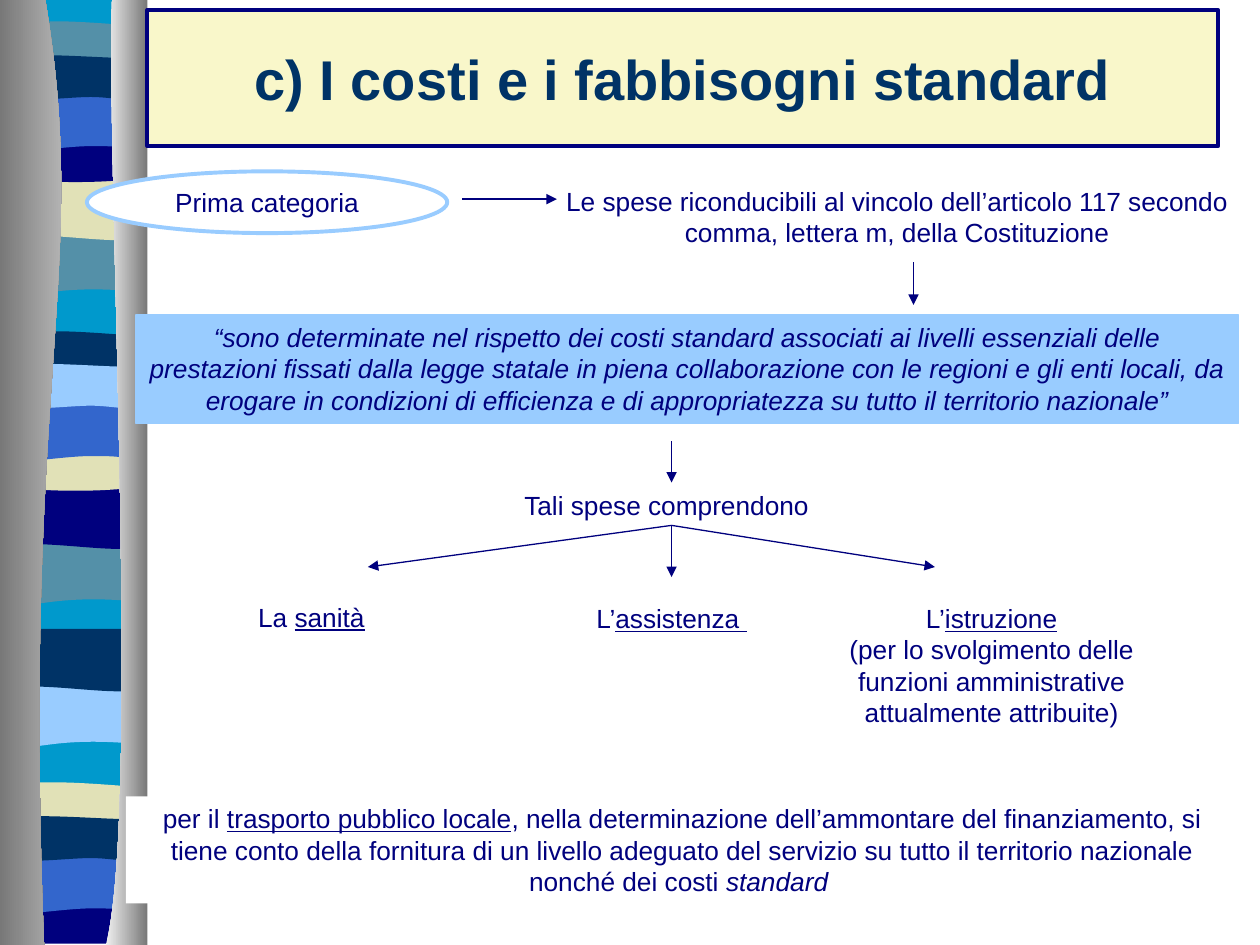
from dataclasses import dataclass

from lxml import etree
from pptx import Presentation
from pptx.dml.color import RGBColor
from pptx.enum import shapes, text
from pptx.oxml import ns
from pptx.util import Inches, Pt

NAVY = RGBColor(0x00, 0x00, 0x7E)
DEEP = RGBColor(0x00, 0x33, 0x66)
BLUE = RGBColor(0x33, 0x66, 0xCC)
SKY = RGBColor(0x99, 0xCC, 0xFF)
CYAN = RGBColor(0x00, 0x99, 0xCC)
STEEL = RGBColor(0x54, 0x90, 0xA8)
SAND = RGBColor(0xE1, 0xE1, 0xB7)
CREAM = RGBColor(0xF9, 0xF7, 0xCA)
WHITE = RGBColor(0xFF, 0xFF, 0xFF)
GREY = RGBColor(0x78, 0x78, 0x78)
SILVER = RGBColor(0xD0, 0xD0, 0xD0)
PALE = RGBColor(0xF0, 0xF0, 0xF0)

Point = tuple[float, float]
Chain = list[Point]
RECT = shapes.MSO_SHAPE.RECTANGLE
OVAL = shapes.MSO_SHAPE.OVAL

# An outline is a list of chains joined by straight lines. A chain is a start
# point, then three Bezier points per curve. Heights count from the band's top.
FLAT = [[(0.05, 0)], [(1.14, 0)]]
SWELL = [[(0.05, 0), (0.72, 0.05), (0.91, 0), (1.14, 0)]]
OUTLINES = {
    "ripple": FLAT + [[(1.14, 0.47), (0.39, 0.39), (0.24, 0.55), (0.05, 0.47)]],
    "bulge": FLAT + [[(1.14, 0.47), (0.96, 0.55), (0.39, 0.42), (0.05, 0.47)]],
    "crest": [
        [(0.05, 0), (0.12, -0.05), (0.29, -0.04), (0.47, -0.04),
         (0.65, -0.04), (1, -0.01), (1.14, 0)],
        [(1.14, 0.24), (0.96, 0.29), (0.24, 0.29), (0.05, 0.24)]],
    "swell": SWELL + [[(1.14, 0.32), (0.96, 0.38), (0.24, 0.38), (0.05, 0.32)]],
    "base": SWELL + [[(1.14, 0.37)], [(0.05, 0.37)]],
    "arch": FLAT + [[(1.14, 0.47), (0.97, 0.42), (0.9, 0.42), (0.72, 0.42),
                     (0.54, 0.42), (0.22, 0.47), (0.05, 0.47)]],
    "drift": [
        [(0.05, 0), (0.21, -0.05), (0.79, 0), (0.97, 0),
         (1.15, 0), (1.1, 0), (1.14, 0)],
        [(1.14, 0.31), (1.07, 0.36), (0.9, 0.31), (0.72, 0.31),
         (0.54, 0.31), (0.17, 0.36), (0.05, 0.31)]],
}


@dataclass
class Band:
    outline: str
    top: float
    color: RGBColor


@dataclass
class Span:
    text: str
    underline: bool = False
    italic: bool = False


@dataclass
class Box:
    place: tuple[float, float, float, float]
    paras: list[list[Span]]
    fill: RGBColor = WHITE
    line: RGBColor | None = None
    line_width: float = 0.75
    geometry: shapes.MSO_SHAPE = RECT
    title: bool = False


@dataclass
class Arrow:
    start: Point
    end: Point


BANDS = [
    Band("ripple", 1.85, STEEL), Band("bulge", 1.41, SAND),
    Band("crest", 0.21, STEEL), Band("swell", 1.08, NAVY),
    Band("arch", 0.74, BLUE), Band("drift", 0.46, DEEP),
    Band("ripple", 4.31, STEEL), Band("bulge", 3.86, NAVY),
    Band("crest", 2.67, DEEP), Band("swell", 3.53, SAND),
    Band("arch", 3.2, BLUE), Band("drift", 2.91, SKY),
    Band("ripple", 5.44, SKY), Band("bulge", 4.99, DEEP),
    Band("crest", 6.25, SAND), Band("base", 7.12, NAVY),
    Band("arch", 6.79, BLUE), Band("drift", 6.5, DEEP),
]

BOXES = [
    Box((1.17, 0.08, 8.5, 1.08), [[Span("c) I costi e i fabbisogni standard")]],
        CREAM, NAVY, 2.25, title=True),
    Box((4.33, 1.42, 5.58, 0.6), [[Span(
        "Le spese riconducibili al vincolo dell’articolo 117 secondo comma, "
        "lettera m, della Costituzione")]]),
    Box((1.08, 2.5, 8.75, 0.86), [[Span(
        "“sono determinate nel rispetto dei costi standard associati ai livelli "
        "essenziali delle prestazioni fissati dalla legge statale in piena "
        "collaborazione con le regioni e gli enti locali, da erogare in condizioni "
        "di efficienza e di appropriatezza su tutto il territorio nazionale”",
        italic=True)]], SKY, SKY),
    Box((2.25, 3.83, 6.08, 0.35), [[Span("Tali spese comprendono")]]),
    Box((1.5, 4.72, 2, 0.35),
        [[Span("La "), Span("sanità", underline=True), Span(" ")]]),
    Box((4.33, 4.73, 2, 0.35), [[Span("L’"), Span("assistenza ", underline=True)]]),
    Box((6.33, 4.73, 3.08, 1.35), [
        [Span("L’"), Span("istruzione", underline=True)],
        [Span("(per lo svolgimento delle funzioni amministrative "
              "attualmente attribuite)")]]),
    Box((1, 6.32, 8.83, 0.85), [[
        Span("per il "), Span("trasporto pubblico locale", underline=True),
        Span(", nella determinazione dell’ammontare del finanziamento, si tiene "
             "conto della fornitura di un livello adeguato del servizio su tutto "
             "il territorio nazionale nonché dei costi "),
        Span("standard ", italic=True)]]),
    Box((0.69, 1.36, 2.86, 0.49), [[Span("Prima categoria")]],
        WHITE, SKY, 2.25, OVAL),
]

FORK = (5.33, 4.17)
ARROWS = [
    Arrow((7.25, 2.08), (7.25, 2.42)), Arrow((5.33, 3.5), (5.33, 3.83)),
    Arrow(FORK, (2.92, 4.5)), Arrow(FORK, (5.33, 4.58)), Arrow(FORK, (7.42, 4.5)),
    Arrow((3.67, 1.58), (4.42, 1.58)),
]


def draw_outline(page, chains: list[Chain], top: float = 0):
    """Draw a closed outline, turning each chain's point triples into curves."""
    corners = [(Inches(x), Inches(top + y)) for chain in chains for x, y in chain]
    builder = page.shapes.build_freeform(*corners[0])
    builder.add_line_segments(corners[1:], close=True)
    shape = builder.convert_to_shape()
    shape.shadow.inherit = False
    shape.line.fill.background()
    steps = [None, *shape._element.iter(ns.qn("a:lnTo"))]
    start = 0
    for chain in chains:
        for first in range(start + 1, start + len(chain), 3):
            curve, *others = steps[first:first + 3]
            curve.tag = ns.qn("a:cubicBezTo")
            for other in others:
                curve.append(other[0])
                other.getparent().remove(other)
        start += len(chain)
    return shape


def draw_band(page, chains: list[Chain], color: RGBColor, top: float = 0) -> None:
    shape = draw_outline(page, chains, top)
    shape.fill.solid()
    shape.fill.fore_color.rgb = color


def draw_curtain(page, edge: Chain, side: float,
                 left: RGBColor, right: RGBColor) -> None:
    """Shade the area between a curved edge and a straight side."""
    shape = draw_outline(page, [edge, [(side, 7.5)], [(side, 0)]])
    shape.fill.gradient()
    shape.fill.gradient_angle = 0
    for stop, color in zip(shape.fill.gradient_stops, (left, right)):
        stop.color.rgb = color


def draw_box(page, box: Box) -> None:
    shape = page.shapes.add_shape(box.geometry, *map(Inches, box.place))
    shape.shadow.inherit = False
    shape.fill.solid()
    shape.fill.fore_color.rgb = box.fill
    if box.line is None:
        shape.line.fill.background()
    else:
        shape.line.color.rgb = box.line
        shape.line.width = Pt(box.line_width)
    frame = shape.text_frame
    frame.word_wrap = True
    frame.vertical_anchor = text.MSO_ANCHOR.MIDDLE if box.title else text.MSO_ANCHOR.TOP
    for index, spans in enumerate(box.paras):
        para = frame.add_paragraph() if index else frame.paragraphs[0]
        para.alignment = text.PP_ALIGN.CENTER
        para.font.name = "Arial"
        para.font.size = Pt(32 if box.title else 15)
        para.font.bold = box.title
        para.font.color.rgb = DEEP if box.title else NAVY
        if not box.title:
            para.line_spacing = Pt(18)
        for span in spans:
            run = para.add_run()
            run.text = span.text
            run.font.underline = span.underline
            run.font.italic = span.italic


def draw_arrow(page, arrow: Arrow) -> None:
    line = page.shapes.add_connector(
        shapes.MSO_CONNECTOR.STRAIGHT, *map(Inches, arrow.start + arrow.end))
    line.line.color.rgb = NAVY
    line.line.width = Pt(0.75)
    etree.SubElement(line.line._get_or_add_ln(), ns.qn("a:tailEnd"), type="triangle")
    etree.SubElement(line._element.spPr, ns.qn("a:effectLst"))


def main() -> None:
    deck = Presentation()
    deck.slide_width, deck.slide_height = Inches(10), Inches(7.5)
    page = deck.slides.add_slide(deck.slide_layouts[6])
    draw_band(page, FLAT + [[(1.14, 7.47)], [(0.05, 7.47)]], CYAN)
    for band in BANDS:
        draw_band(page, OUTLINES[band.outline], band.color, band.top)
    draw_curtain(page, [(0.36, 0), (0.72, 2.16), (0.17, 2.96), (0.35, 7.5)],
                 0, GREY, SILVER)
    draw_curtain(page, [(0.89, 0), (0.84, 1.25), (1.12, 6.46), (0.84, 7.5)],
                 1.17, PALE, GREY)
    for box in BOXES:
        draw_box(page, box)
    for arrow in ARROWS:
        draw_arrow(page, arrow)
    deck.save("out.pptx")


if __name__ == "__main__":
    main()
